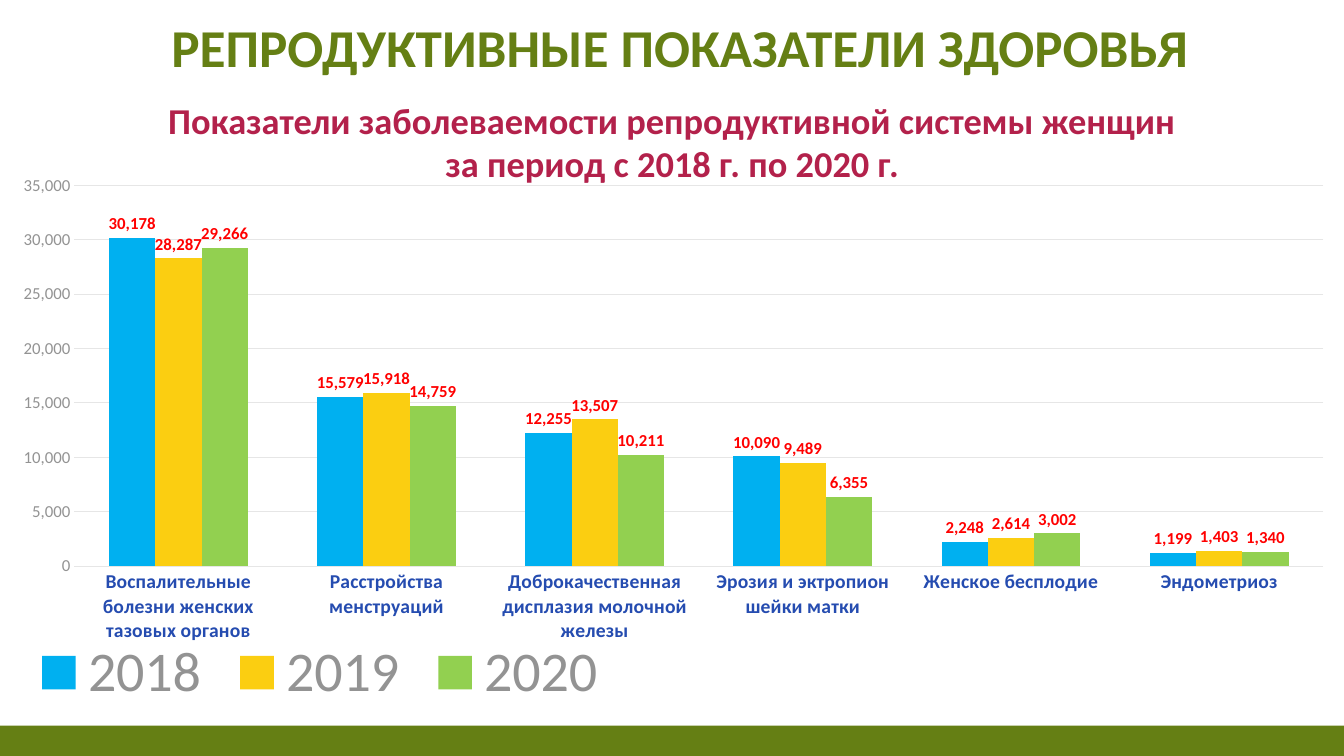
from dataclasses import dataclass

from pptx import Presentation
from pptx.chart.data import CategoryChartData
from pptx.dml.color import RGBColor
from pptx.enum.chart import XL_CHART_TYPE as ChartType
from pptx.enum.chart import XL_LABEL_POSITION as LabelPosition
from pptx.enum.chart import XL_LEGEND_POSITION as LegendPosition
from pptx.enum.chart import XL_TICK_MARK as TickMark
from pptx.enum.shapes import MSO_SHAPE as Shape
from pptx.enum.text import MSO_ANCHOR as Anchor
from pptx.enum.text import PP_ALIGN as Align
from pptx.oxml import parse_xml
from pptx.oxml.ns import nsdecls
from pptx.util import Inches, Pt


@dataclass(frozen=True)
class Theme:
    font: str = "Calibri"
    olive: str = "657F14"
    crimson: str = "B3214B"
    category_blue: str = "254CB0"
    value_red: str = "FF0000"
    muted: str = "939393"
    grid: str = "E6E6E6"
    text: str = "595959"
    years: tuple = ("00B0F0", "FBCE11", "92D050")
    title_size: int = 38
    subtitle_size: int = 26
    legend_size: int = 40
    category_size: int = 14
    value_size: int = 12
    base_size: int = 10


DISEASES = (
    "Воспалительные болезни женских тазовых органов",
    "Расстройства менструаций",
    "Доброкачественная дисплазия молочной железы",
    "Эрозия и эктропион шейки матки",
    "Женское бесплодие",
    "Эндометриоз",
)
CASES = {
    "2018": (30178, 15579, 12255, 10090, 2248, 1199),
    "2019": (28287, 15918, 13507, 9489, 2614, 1403),
    "2020": (29266, 14759, 10211, 6355, 3002, 1340),
}
THOUSANDS = "#,##0"


class HealthSlide:
    def __init__(self, deck, theme):
        self.deck = deck
        self.theme = theme
        self.slide = deck.slides.add_slide(deck.slide_layouts[6])

    def place(self, left, top, width, height):
        """Turn percentages of the slide's size into lengths."""
        across, down = self.deck.slide_width / 100, self.deck.slide_height / 100
        return (round(left * across), round(top * down),
                round(width * across), round(height * down))

    def style(self, font, size, color, bold=False):
        font.name = self.theme.font
        font.size = Pt(size)
        font.bold = bold
        font.color.rgb = RGBColor.from_string(color)

    def band(self, area, color):
        band = self.slide.shapes.add_shape(Shape.RECTANGLE, *self.place(*area))
        band.shadow.inherit = False
        band.fill.solid()
        band.fill.fore_color.rgb = RGBColor.from_string(color)
        band.line.fill.background()

    def heading(self, area, wording, size, color, anchor=Anchor.TOP):
        frame = self.slide.shapes.add_textbox(*self.place(*area)).text_frame
        frame.word_wrap = True
        frame.vertical_anchor = anchor
        frame.text = wording
        for line in frame.paragraphs:
            line.alignment = Align.CENTER
            for run in line.runs:
                self.style(run.font, size, color, bold=True)

    def columns(self, area, categories, series, plot_box, legend_box):
        theme = self.theme
        data = CategoryChartData(number_format=THOUSANDS)
        data.categories = categories
        for year, cases in series.items():
            data.add_series(year, cases)
        chart = self.slide.shapes.add_chart(
            ChartType.COLUMN_CLUSTERED, *self.place(*area), data).chart
        chart.has_title = False
        self.style(chart.font, theme.base_size, theme.text)

        plot = chart.plots[0]
        plot.gap_width = 150
        plot.overlap = 0
        plot.vary_by_categories = False
        for bars, color in zip(plot.series, theme.years):
            bars.format.fill.solid()
            bars.format.fill.fore_color.rgb = RGBColor.from_string(color)
            labels = bars.data_labels
            labels.show_value = True
            labels.number_format = THOUSANDS
            labels.number_format_is_linked = False
            labels.position = LabelPosition.OUTSIDE_END
            self.style(labels.font, theme.value_size, theme.value_red, bold=True)

        self.axis(chart.category_axis, theme.category_size, theme.category_blue, bold=True)
        values = chart.value_axis
        self.axis(values, theme.value_size, theme.muted)
        values.minimum_scale, values.maximum_scale, values.major_unit = 0, 35000, 5000
        values.tick_labels.number_format = THOUSANDS
        values.tick_labels.number_format_is_linked = False
        values.has_major_gridlines = True
        grid = values.major_gridlines.format.line
        grid.color.rgb = RGBColor.from_string(theme.grid)
        grid.width = Pt(0.75)

        chart.has_legend = True
        chart.legend.position = LegendPosition.BOTTOM
        chart.legend.include_in_layout = False
        self.style(chart.legend.font, theme.legend_size, theme.muted)
        self.fix_layout(chart, "plotArea", 0, plot_box, inner=True)
        self.fix_layout(chart, "legend", 1, legend_box)

    def axis(self, axis, size, color, bold=False):
        axis.major_tick_mark = axis.minor_tick_mark = TickMark.NONE
        axis.format.line.fill.background()
        self.style(axis.tick_labels.font, size, color, bold)

    def fix_layout(self, chart, part, index, box, inner=False):
        """Pin a chart part to a box given in shares of the chart's size."""
        target = chart.element.xpath(f"c:chart/c:{part}")[0]
        for automatic in target.xpath("c:layout"):
            target.remove(automatic)
        settings = [("layoutTarget", "inner")] if inner else []
        settings += [("xMode", "edge"), ("yMode", "edge"), *zip("xywh", box)]
        body = "".join(f'<c:{name} val="{value}"/>' for name, value in settings)
        target.insert(index, parse_xml(
            f'<c:layout {nsdecls("c")}><c:manualLayout>{body}</c:manualLayout></c:layout>'))


def main():
    deck = Presentation()
    deck.slide_width, deck.slide_height = Inches(13.33), Inches(7.5)
    theme = Theme()
    page = HealthSlide(deck, theme)
    page.band((0, 96, 100, 4), theme.olive)
    page.heading((2.85, 0.93, 95.5, 10), "РЕПРОДУКТИВНЫЕ ПОКАЗАТЕЛИ ЗДОРОВЬЯ",
                 theme.title_size, theme.olive, Anchor.BOTTOM)
    page.columns((0.6, 23.2, 98.65, 73.33), DISEASES, CASES,
                 plot_box=(0.05, 0.018, 0.942, 0.687),
                 legend_box=(0.01, 0.84, 0.45, 0.12))
    page.heading((1.65, 12.27, 96.77, 13.07),
                 "Показатели заболеваемости репродуктивной системы женщин\n"
                 "за период с 2018 г. по 2020 г.",
                 theme.subtitle_size, theme.crimson)
    deck.save("out.pptx")


if __name__ == "__main__":
    main()
